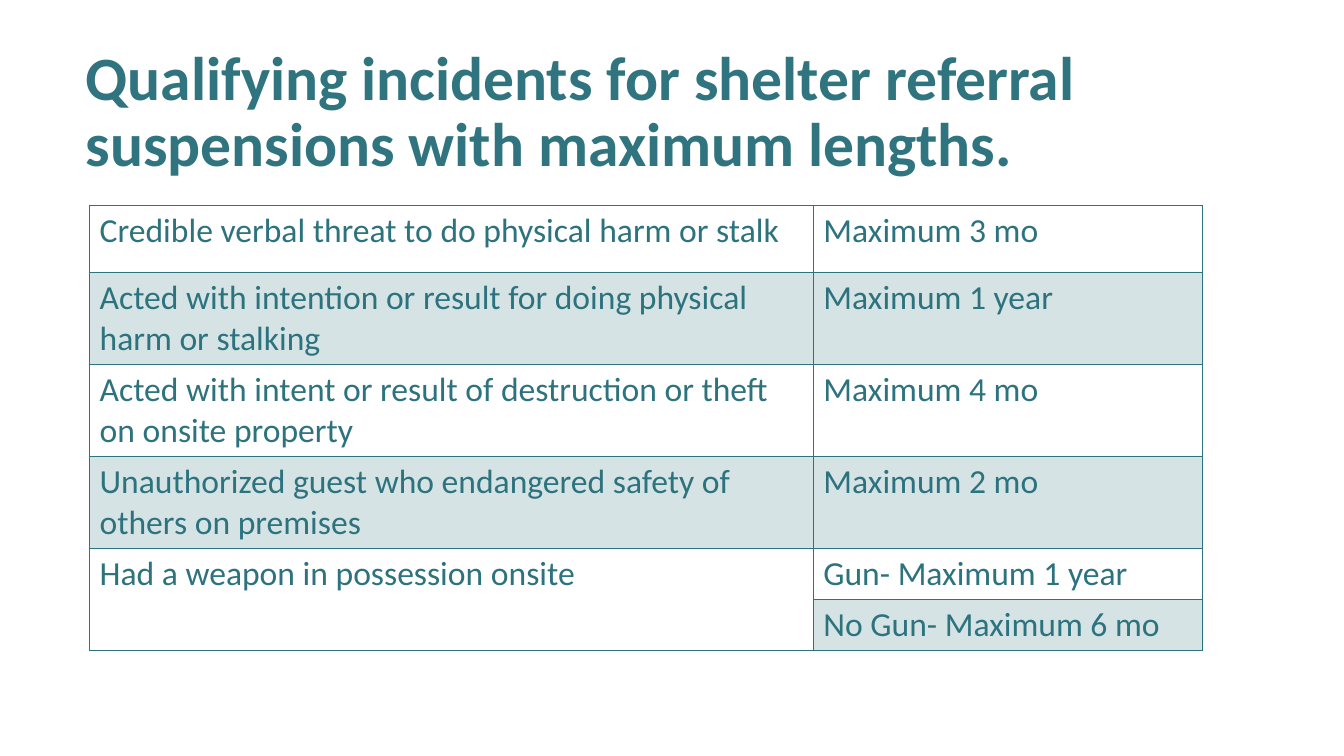
import dataclasses

import lxml.etree
import pptx
import pptx.dml.color
import pptx.enum.text
import pptx.oxml.ns
import pptx.util

Pt = pptx.util.Pt


@dataclasses.dataclass(frozen=True)
class Theme:
    font: str = "Calibri"
    title_color: str = "2F747E"
    table_color: str = "2D737E"
    title_size: float = 44
    table_size: float = 24
    border_width: float = 1
    band_opacity: int = 20


class Deck:
    def __init__(self, theme, width, height):
        self.theme = theme
        self.prs = pptx.Presentation()
        self.prs.slide_width, self.prs.slide_height = Pt(width), Pt(height)
        self.s = None

    def add_slide(self):
        self.s = self.prs.slides.add_slide(self.prs.slide_layouts[5])

    def add_text(self, tf, text, color, **font):
        p = tf.paragraphs[0]
        p.alignment = pptx.enum.text.PP_ALIGN.LEFT
        r = p.add_run()
        r.text = text
        r.font.color.rgb = pptx.dml.color.RGBColor.from_string(color)
        for name, value in {"name": self.theme.font, **font}.items():
            setattr(r.font, name, value)
        return p

    def title(self, text, left, top, width, height):
        sp = self.s.shapes.title
        box = {"left": left, "top": top, "width": width, "height": height}
        for name, value in box.items():
            setattr(sp, name, Pt(value))
        tf = sp.text_frame
        frame = {
            "word_wrap": True,
            "auto_size": pptx.enum.text.MSO_AUTO_SIZE.NONE,
            "vertical_anchor": pptx.enum.text.MSO_ANCHOR.MIDDLE,
        }
        for name, value in frame.items():
            setattr(tf, name, value)
        p = self.add_text(tf, text, self.theme.title_color,
                          size=Pt(self.theme.title_size), bold=True)
        p.line_spacing = 0.9

    def table(self, rows, left, top, col_widths, row_heights):
        """Draw a grid with every second row tinted; None joins the cell above."""
        table = self.s.shapes.add_table(
            len(rows), len(col_widths), Pt(left), Pt(top),
            Pt(sum(col_widths)), Pt(sum(row_heights))).table
        table.first_row = table.horz_banding = False
        for column, width in zip(table.columns, col_widths):
            column.width = Pt(width)
        for i, (texts, height) in enumerate(zip(rows, row_heights)):
            table.rows[i].height = Pt(height)
            for j, text in enumerate(texts):
                cell = table.cell(i, j)
                self.border(cell)
                if text is None:
                    table.cell(i - 1, j).merge(cell)
                    cell.fill.background()
                    continue
                self.tint(cell, i % 2 == 1)
                self.add_text(cell.text_frame, text, self.theme.table_color,
                              size=Pt(self.theme.table_size))

    def border(self, cell):
        qn = pptx.oxml.ns.qn
        tc_pr = cell._tc.get_or_add_tcPr()
        for side in ("a:lnL", "a:lnR", "a:lnT", "a:lnB"):
            ln = lxml.etree.SubElement(
                tc_pr, qn(side), w=str(Pt(self.theme.border_width)))
            fill = lxml.etree.SubElement(ln, qn("a:solidFill"))
            lxml.etree.SubElement(
                fill, qn("a:srgbClr"), val=self.theme.table_color)

    def tint(self, cell, banded):
        if not banded:
            cell.fill.background()
            return
        qn = pptx.oxml.ns.qn
        cell.fill.solid()
        cell.fill.fore_color.rgb = pptx.dml.color.RGBColor.from_string(
            self.theme.table_color)
        color = cell._tc.tcPr.find(qn("a:solidFill")).find(qn("a:srgbClr"))
        lxml.etree.SubElement(
            color, qn("a:alpha"), val=str(self.theme.band_opacity * 1000))


INCIDENTS = [
    ("Credible verbal threat to do physical harm or stalk", "Maximum 3 mo"),
    ("Acted with intention or result for doing physical harm or stalking",
     "Maximum 1 year"),
    ("Acted with intent or result of destruction or theft on onsite property",
     "Maximum 4 mo"),
    ("Unauthorized guest who endangered safety of others on premises",
     "Maximum 2 mo"),
    ("Had a weapon in possession onsite", "Gun- Maximum 1 year"),
    (None, "No Gun- Maximum 6 mo"),
]


def main():
    deck = Deck(Theme(), 960, 540)
    deck.add_slide()
    deck.title("Qualifying incidents for shelter referral suspensions "
               "with maximum lengths.", 54, 28.8, 839.5, 104.4)
    deck.table(INCIDENTS, 64, 147, (517, 278), [47.5] * 4 + [23.75] * 2)
    deck.prs.save("out.pptx")


if __name__ == "__main__":
    main()
